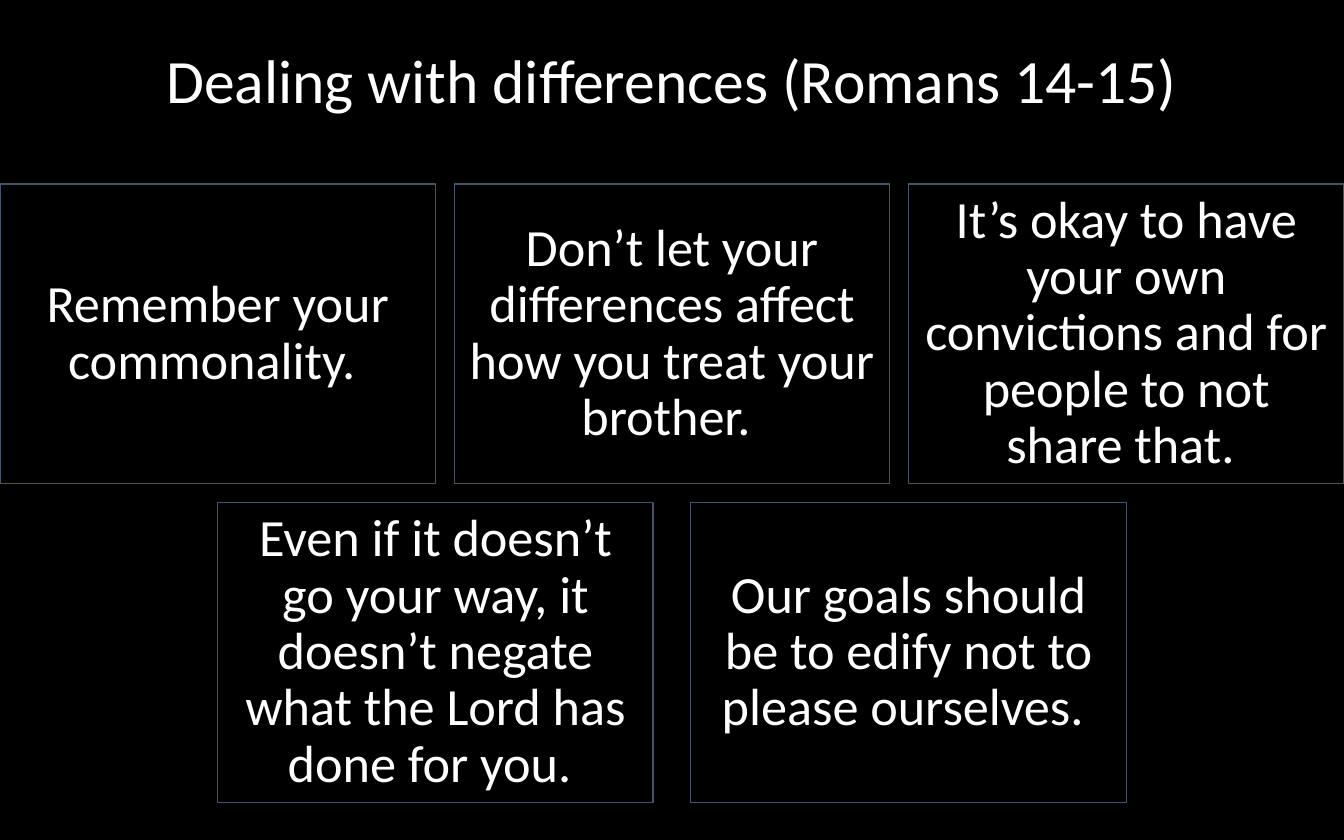
import pptx
import pptx.dml.color
import pptx.enum.shapes
import pptx.enum.text
import pptx.util

WIDTH, HEIGHT = 10, 6.25
CARD_WIDTH, CARD_HEIGHT, GAP = 3.24, 2.23, 0.14
CARDS_TOP = 1.37
ROWS = [
    (0, GAP, [
        "Remember your commonality. ",
        "Don’t let your differences affect how you treat your brother. ",
        "It’s okay to have your own convictions and for people to not share that. ",
    ]),
    (CARD_WIDTH / 2, 2 * GAP, [
        "Even if it doesn’t go your way, it doesn’t negate what the Lord has done for you. ",
        "Our goals should be to edify not to please ourselves. ",
    ]),
]


def color(value):
    return pptx.dml.color.RGBColor.from_string(value)


class Deck:
    """Holds the style and the current slide."""

    font = "Calibri"
    background, ink, border = "000000", "FFFFFF", "44546A"

    def __init__(self, width, height):
        self.presentation = pptx.Presentation()
        self.presentation.slide_width = pptx.util.Inches(width)
        self.presentation.slide_height = pptx.util.Inches(height)

    def add_slide(self):
        self.slide = self.presentation.slides.add_slide(self.presentation.slide_layouts[6])
        fill = self.slide.background.fill
        fill.solid()
        fill.fore_color.rgb = color(self.background)

    def add_text(self, shape, text, size):
        frame = shape.text_frame
        frame.word_wrap = True
        frame.vertical_anchor = pptx.enum.text.MSO_ANCHOR.MIDDLE
        frame.margin_left = frame.margin_right = pptx.util.Inches(0.08)
        frame.margin_top = frame.margin_bottom = pptx.util.Inches(0.04)
        paragraph = frame.paragraphs[0]
        paragraph.alignment = pptx.enum.text.PP_ALIGN.CENTER
        paragraph.line_spacing = 0.9
        run = paragraph.add_run()
        run.text = text
        run.font.name = self.font
        run.font.size = pptx.util.Pt(size)
        run.font.color.rgb = color(self.ink)

    def title(self, text, *box):
        shape = self.slide.shapes.add_textbox(*map(pptx.util.Inches, box))
        self.add_text(shape, text, 33)

    def card(self, text, left, top):
        box = map(pptx.util.Inches, (left, top, CARD_WIDTH, CARD_HEIGHT))
        shape = self.slide.shapes.add_shape(pptx.enum.shapes.MSO_SHAPE.RECTANGLE, *box)
        shape.shadow.inherit = False
        shape.fill.background()
        shape.line.color.rgb = color(self.border)
        shape.line.width = pptx.util.Pt(0.75)
        self.add_text(shape, text, 28)


def main():
    deck = Deck(WIDTH, HEIGHT)
    deck.add_slide()
    deck.title("Dealing with differences (Romans 14-15)", 0.69, 0.02, 8.62, 1.21)
    for row, (start, gap, texts) in enumerate(ROWS):
        top = CARDS_TOP + row * (CARD_HEIGHT + GAP)
        for column, text in enumerate(texts):
            deck.card(text, start + column * (CARD_WIDTH + gap), top)
    deck.presentation.save("out.pptx")


if __name__ == "__main__":
    main()
